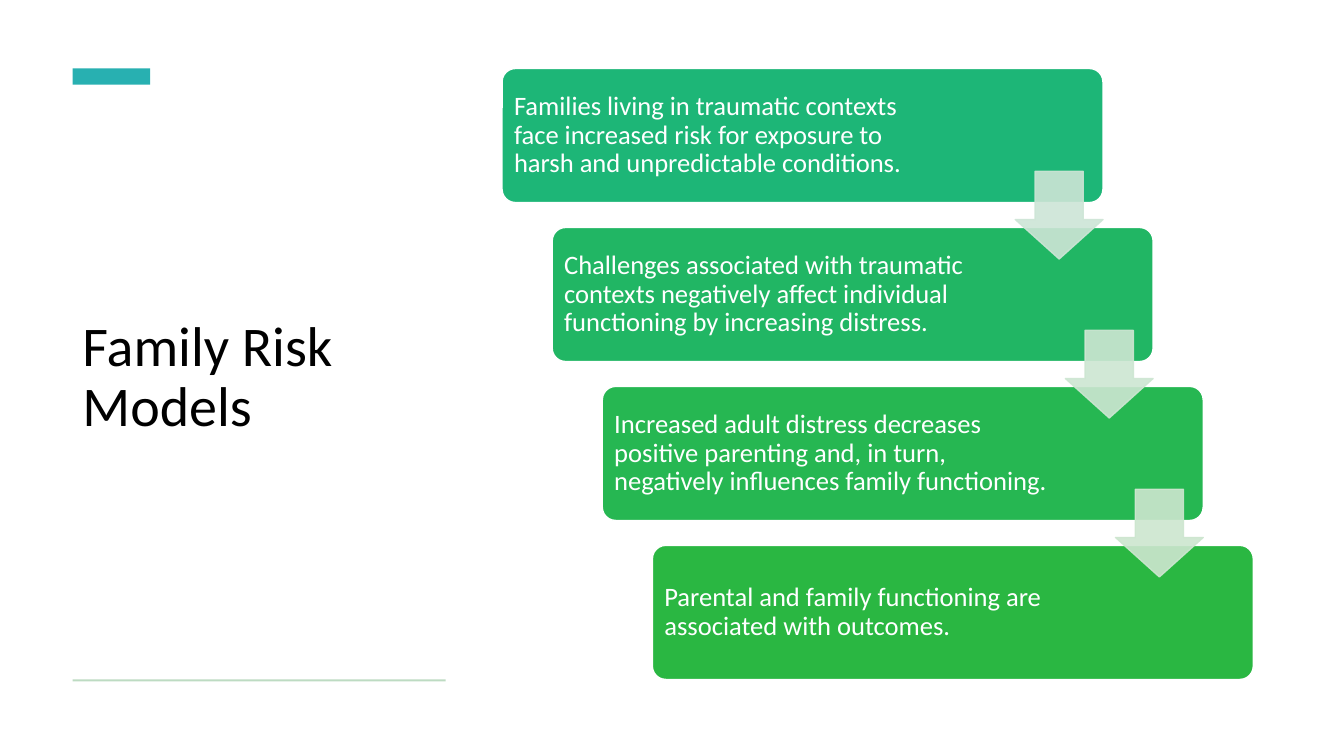
import pptx
import pptx.util
import pptx.dml.color
import pptx.enum.shapes
import pptx.enum.text
import pptx.oxml.ns
from lxml import etree

Inches = pptx.util.Inches
Pt = pptx.util.Pt
SHAPE = pptx.enum.shapes.MSO_SHAPE

COLORS = {
    "title": "000000",
    "white": "FFFFFF",
    "accent": "28B0B1",
    "rule": "BDDBC2",
    "steps": ["1DB677", "21B664", "26B752", "2AB742"],
    "arrows": ["CDE5D6", "CDE6D2", "CDE6CF"],
}

STEPS = [
    ("Families living in traumatic contexts face increased risk for exposure "
     "to harsh and unpredictable conditions.", 1.55),
    ("Challenges associated with traumatic contexts negatively affect "
     "individual functioning by increasing distress.", 1.44),
    ("Increased adult distress decreases positive parenting and, in turn, "
     "negatively influences family functioning.", 1.44),
    ("Parental and family functioning are associated with outcomes.", 1.44),
]

STEP_LEFT, STEP_TOP = 4.98, 0.68
STEP_W, STEP_H = 5.96, 1.33
SHIFT_X, SHIFT_Y = 0.497, 1.577
ARROW_LEFT, ARROW_TOP, ARROW_SIZE = 10.07, 1.7, 0.87


def rgb(color):
    return pptx.dml.color.RGBColor.from_string(color)


def add_text(shape, text, size=19, color="FFFFFF", font="Calibri",
             insets=(0.1, 0.05, 0.1, 0.05)):
    tf = shape.text_frame
    tf.word_wrap = True
    tf.vertical_anchor = pptx.enum.text.MSO_ANCHOR.MIDDLE
    tf.margin_left, tf.margin_top, tf.margin_right, tf.margin_bottom = map(Inches, insets)
    p = tf.paragraphs[0]
    p.alignment = pptx.enum.text.PP_ALIGN.LEFT
    p.line_spacing = 0.9
    r = p.add_run()
    r.text = text
    r.font.name = font
    r.font.size = Pt(size)
    r.font.color.rgb = rgb(color)


def add_shape(s, kind, left, top, width, height, fill, line=None, adj=()):
    sp = s.shapes.add_shape(kind, Inches(left), Inches(top), Inches(width), Inches(height))
    sp.shadow.inherit = False
    sp.fill.solid()
    sp.fill.fore_color.rgb = rgb(fill)
    if line:
        sp.line.color.rgb = rgb(line)
        sp.line.width = Pt(1)
    else:
        sp.line.fill.background()
    for i, value in enumerate(adj):
        sp.adjustments[i] = value
    return sp


def set_opacity(sp, percent):
    qn = pptx.oxml.ns.qn
    for clr in sp.fill._xPr.iter(qn("a:srgbClr")):
        etree.SubElement(clr, qn("a:alpha")).set("val", str(percent * 1000))


def add_title(s, text):
    sp = s.shapes.add_textbox(Inches(0.72), Inches(1.05), Inches(3.7), Inches(5.41))
    add_text(sp, text, size=40, color=COLORS["title"])


def add_step(s, i, text, right_inset):
    sp = add_shape(s, SHAPE.ROUNDED_RECTANGLE, STEP_LEFT + i * SHIFT_X,
                   STEP_TOP + i * SHIFT_Y, STEP_W, STEP_H,
                   COLORS["steps"][i], line=COLORS["white"], adj=(0.1,))
    add_text(sp, text, color=COLORS["white"], insets=(0.08, 0.08, right_inset, 0.08))


def add_arrow(s, i, color):
    sp = add_shape(s, SHAPE.DOWN_ARROW, ARROW_LEFT + i * SHIFT_X,
                   ARROW_TOP + i * SHIFT_Y, ARROW_SIZE, ARROW_SIZE,
                   color, line=color)
    sp.adjustments[0] = 0.45
    sp.adjustments[1] = 0.55
    sp.adjustments[0], sp.adjustments[1] = 0.55, 0.45
    set_opacity(sp, 90)


def main():
    prs = pptx.Presentation()
    prs.slide_width, prs.slide_height = Inches(13.33), Inches(7.5)
    s = prs.slides.add_slide(prs.slide_layouts[6])
    add_title(s, "Family Risk Models")
    add_shape(s, SHAPE.RECTANGLE, 0.72, 0.68, 0.77, 0.16, COLORS["accent"])
    add_shape(s, SHAPE.RECTANGLE, 0.72, 6.74, 3.7, 0.02, COLORS["rule"])
    for i, (text, right_inset) in enumerate(STEPS):
        add_step(s, i, text, right_inset)
    for i, color in enumerate(COLORS["arrows"]):
        add_arrow(s, i, color)
    prs.save("out.pptx")


if __name__ == "__main__":
    main()
